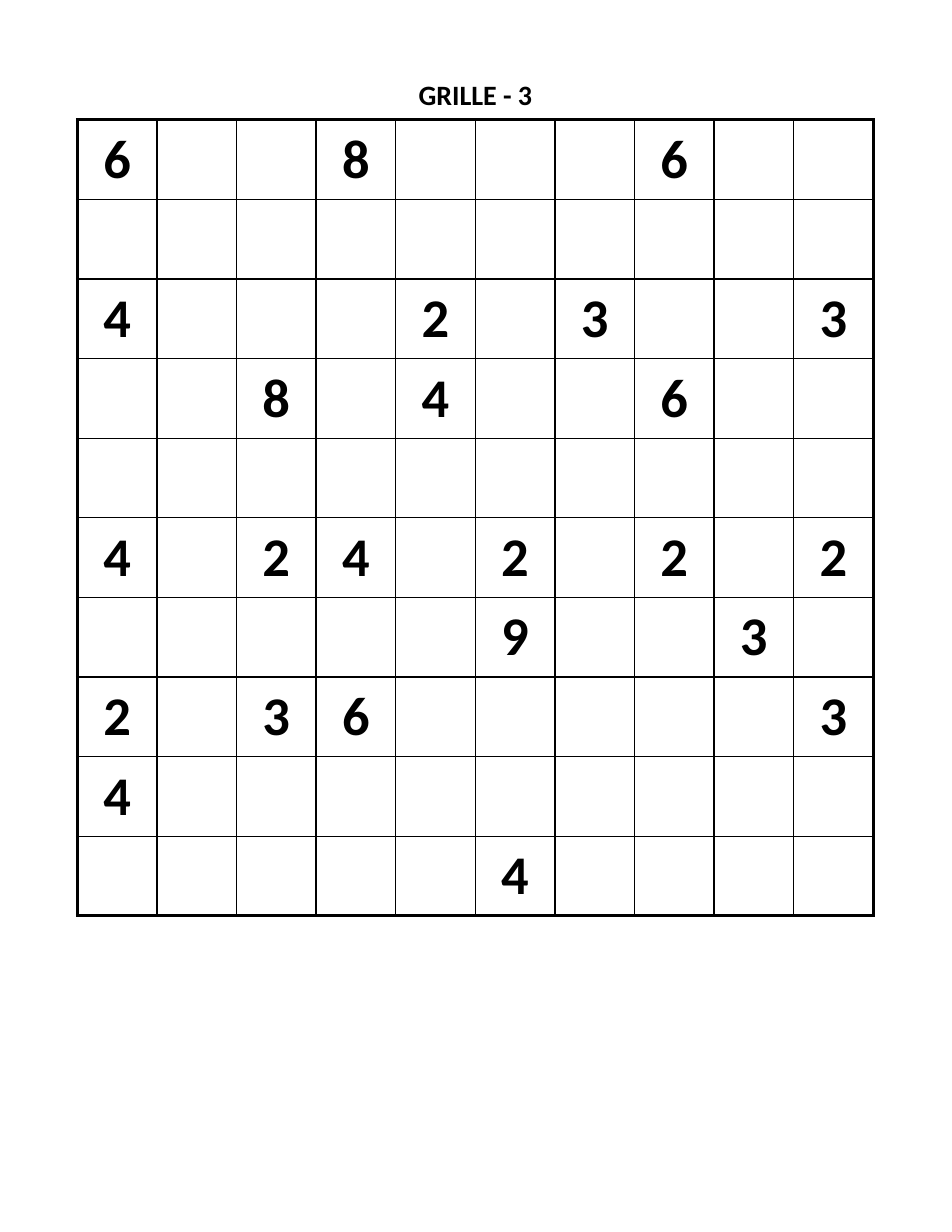
from lxml import etree
from pptx import Presentation
from pptx.dml.color import RGBColor
from pptx.enum.text import MSO_ANCHOR, MSO_AUTO_SIZE, PP_ALIGN
from pptx.oxml.ns import qn
from pptx.util import Inches, Pt

CENTER = PP_ALIGN.CENTER
TOP, MIDDLE = MSO_ANCHOR.TOP, MSO_ANCHOR.MIDDLE
FIT_SHAPE = MSO_AUTO_SIZE.SHAPE_TO_FIT_TEXT
TITLE_ONLY_LAYOUT = 5

FONT = "Calibri"
BLACK, WHITE = "000000", "FFFFFF"
LEFT, TITLE_TOP, GRID_TOP = 0.69, 0.69, 1.07
GRID_SIZE = 7.11
THIN, THICK = 1, 2

# One string per row; a dot is an empty cell.
PUZZLE = [
    "6..8...6..",
    "..........",
    "4...2.3..3",
    "..8.4..6..",
    "..........",
    "4.24.2.2.2",
    ".....9..3.",
    "2.36.....3",
    "4.........",
    ".....4....",
]


def color(hex_value):
    return RGBColor.from_string(hex_value)


def write_bold(paragraph, text, size):
    paragraph.alignment = CENTER
    run = paragraph.add_run()
    run.text = text
    run.font.name = FONT
    run.font.size = Pt(size)
    run.font.bold = True
    run.font.color.rgb = color(BLACK)


def remove_margins(box):
    box.margin_left = box.margin_top = box.margin_right = box.margin_bottom = 0


def add_title(slide, text):
    title = slide.shapes.title
    title.left, title.top = Inches(LEFT), Inches(TITLE_TOP)
    title.width, title.height = Inches(GRID_SIZE), Inches(0.3)
    frame = title.text_frame
    remove_margins(frame)
    frame.word_wrap = True
    frame.auto_size = FIT_SHAPE
    frame.vertical_anchor = TOP
    write_bold(frame.paragraphs[0], text, 18)


def set_borders(cell, widths):
    """Draw black borders; widths maps the sides L, R, T and B, in that order, to points."""
    properties = cell._tc.get_or_add_tcPr()
    for side, width in widths.items():
        line = etree.SubElement(properties, qn(f"a:ln{side}"), w=str(Pt(width)))
        fill = etree.SubElement(line, qn("a:solidFill"))
        etree.SubElement(fill, qn("a:srgbClr"), val=BLACK)


def add_grid(slide, puzzle):
    count = len(puzzle)
    last = count - 1
    table = slide.shapes.add_table(
        count, count, Inches(LEFT), Inches(GRID_TOP), Inches(GRID_SIZE), Inches(GRID_SIZE)
    ).table
    table.first_row = False
    table.horz_banding = False
    for column in table.columns:
        column.width = Inches(GRID_SIZE / count)
    for row_index, digits in enumerate(puzzle):
        table.rows[row_index].height = Inches(GRID_SIZE / count)
        for column_index, digit in enumerate(digits):
            cell = table.cell(row_index, column_index)
            set_borders(cell, {
                "L": THICK if column_index == 0 else THIN,
                "R": THICK if column_index == last else THIN,
                "T": THICK if row_index == 0 else THIN,
                "B": THICK if row_index == last else THIN,
            })
            cell.fill.solid()
            cell.fill.fore_color.rgb = color(WHITE)
            if digit != ".":
                remove_margins(cell)
                cell.vertical_anchor = MIDDLE
                write_bold(cell.text_frame.paragraphs[0], digit, 35)


def main():
    presentation = Presentation()
    presentation.slide_width = Inches(8.5)
    presentation.slide_height = Inches(11)
    slide = presentation.slides.add_slide(presentation.slide_layouts[TITLE_ONLY_LAYOUT])
    add_title(slide, "GRILLE - 3")
    add_grid(slide, PUZZLE)
    presentation.save("out.pptx")


if __name__ == "__main__":
    main()
